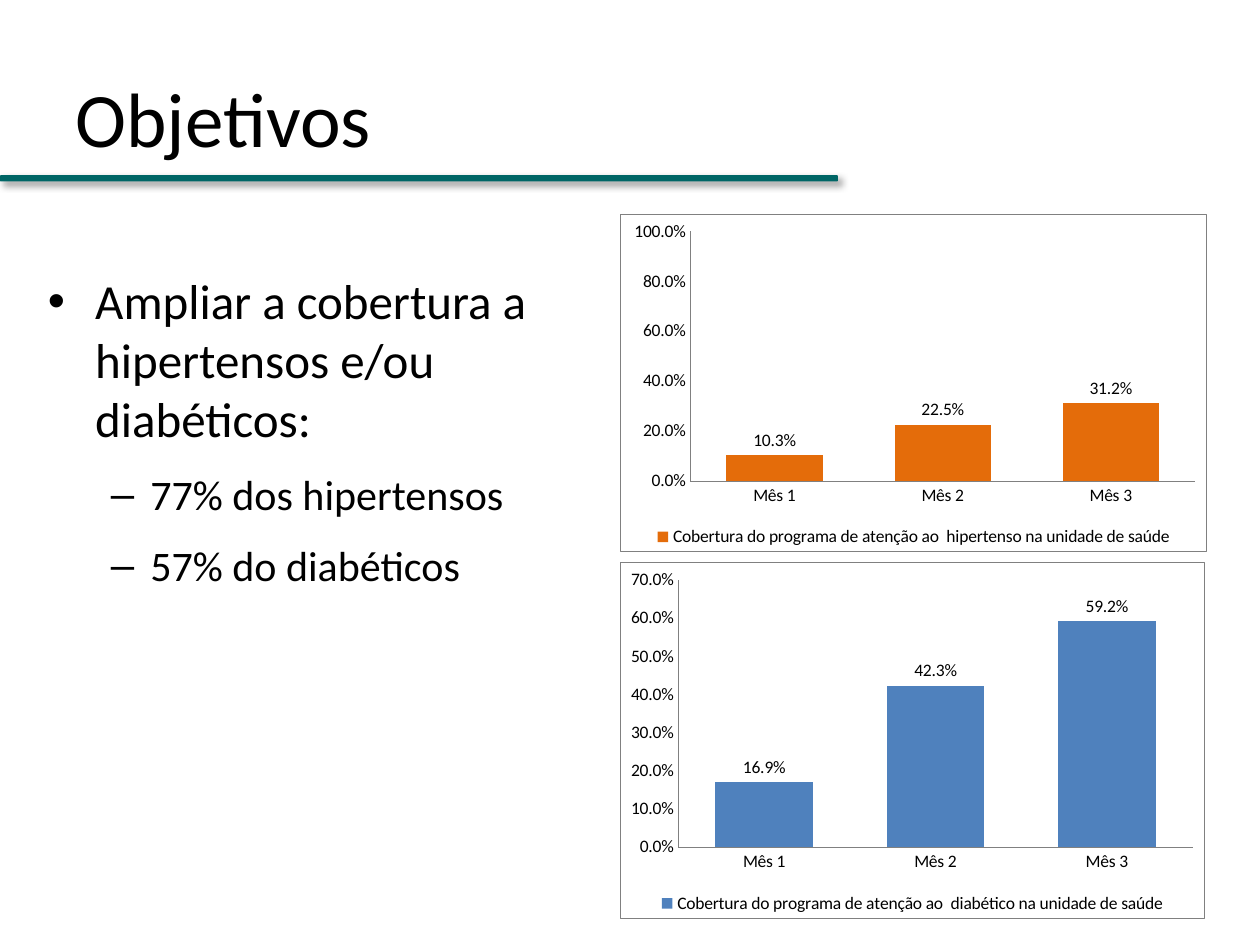
from dataclasses import dataclass

from lxml import etree
from pptx import Presentation
from pptx import util as u
from pptx.chart import data as chart_data
from pptx.dml.color import RGBColor
from pptx.enum import chart as ch, shapes, text
from pptx.oxml import parse_xml
from pptx.oxml.ns import nsdecls, qn


@dataclass
class Theme:
    font: str = "Calibri"
    ink: str = "000000"
    paper: str = "FFFFFF"
    rule: str = "006666"
    line: str = "808080"
    orange: str = "E46C0A"
    blue: str = "4F81BD"
    title_size: int = 44
    body_sizes: tuple = (28, 24)
    chart_size: int = 10
    hairline: float = 0.25


class SlideBuilder:
    def __init__(self, slide, theme):
        self.slide = slide
        self.theme = theme

    def style_font(self, font, size):
        font.name = self.theme.font
        font.size = u.Pt(size)
        font.color.rgb = RGBColor.from_string(self.theme.ink)

    def place(self, shape, box):
        shape.left, shape.top, shape.width, shape.height = map(u.Pt, box)

    def title(self, wording, box):
        shape = self.slide.shapes.title
        self.place(shape, box)
        frame = shape.text_frame
        frame.text = wording
        frame.vertical_anchor = text.MSO_ANCHOR.MIDDLE
        frame.paragraphs[0].alignment = text.PP_ALIGN.LEFT
        self.style_font(frame.paragraphs[0].font, self.theme.title_size)

    def bullets(self, items, box):
        shape = self.slide.placeholders[1]
        self.place(shape, box)
        frame = shape.text_frame
        frame.auto_size = text.MSO_AUTO_SIZE.NONE
        frame.text = "\n".join(wording for _, wording in items)
        indents = ((27, -27), (58.5, -22.5))
        for paragraph, (level, _) in zip(frame.paragraphs, items):
            paragraph.level = level
            paragraph.space_before = u.Pt(12)
            self.style_font(paragraph.font, self.theme.body_sizes[level])
            margin, hanging = indents[level]
            properties = paragraph._p.get_or_add_pPr()
            properties.set("marL", str(u.Pt(margin)))
            properties.set("indent", str(u.Pt(hanging)))

    def rule(self, box):
        shape = self.slide.shapes.add_shape(
            shapes.MSO_SHAPE.ROUNDED_RECTANGLE, *map(u.Pt, box))
        shape.fill.solid()
        shape.fill.fore_color.rgb = RGBColor.from_string(self.theme.rule)
        shape.line.fill.background()
        # Soft shadow to the lower right
        shape.shadow.inherit = False
        effects = shape._element.spPr.find(qn("a:effectLst"))
        effects.append(parse_xml(
            f'<a:outerShdw {nsdecls("a")} blurRad="{u.Pt(4)}" dist="{u.Pt(3)}" '
            'dir="2700000" algn="ctr" rotWithShape="0"><a:srgbClr val="000000">'
            '<a:alpha val="40000"/></a:srgbClr></a:outerShdw>'))

    def column_chart(self, box, plot, name, values, color, maximum=None, step=None):
        data = chart_data.CategoryChartData(number_format="0.0%")
        data.categories = ["Mês 1", "Mês 2", "Mês 3"]
        data.add_series(name, values)
        chart = self.slide.shapes.add_chart(
            ch.XL_CHART_TYPE.COLUMN_CLUSTERED, *map(u.Pt, box), data).chart
        self.style_font(chart.font, self.theme.chart_size)
        chart.has_title = False
        chart.has_legend = True
        chart.legend.position = ch.XL_LEGEND_POSITION.BOTTOM
        chart.legend.include_in_layout = False

        # Axes
        for axis in (chart.category_axis, chart.value_axis):
            axis.has_major_gridlines = False
            axis.major_tick_mark = axis.minor_tick_mark = ch.XL_TICK_MARK.NONE
            axis.format.line.color.rgb = RGBColor.from_string(self.theme.line)
            axis.format.line.width = u.Pt(self.theme.hairline)
            self.style_font(axis.tick_labels.font, self.theme.chart_size)
        axis = chart.value_axis
        axis.tick_labels.number_format = "0.0%"
        axis.tick_labels.number_format_is_linked = False
        if maximum is not None:
            axis.minimum_scale, axis.maximum_scale = 0, maximum
            axis.major_unit = step

        # Columns and labels
        columns = chart.plots[0]
        columns.gap_width = 75
        columns.vary_by_categories = False
        fill = columns.series[0].format.fill
        fill.solid()
        fill.fore_color.rgb = RGBColor.from_string(color)
        labels = columns.series[0].data_labels
        labels.show_value = True
        labels.number_format = "0.0%"
        labels.number_format_is_linked = False
        labels.position = ch.XL_LABEL_POSITION.OUTSIDE_END
        self.style_font(labels.font, self.theme.chart_size)
        self.chart_areas(chart, plot)

    def chart_areas(self, chart, plot):
        root = chart._chartSpace.find(qn("c:chart"))
        area = root.find(qn("c:plotArea"))
        for layout in area.findall(qn("c:layout")):
            area.remove(layout)
        layout = parse_xml(
            f'<c:layout {nsdecls("c")}><c:manualLayout><c:layoutTarget val="inner"/>'
            '<c:xMode val="edge"/><c:yMode val="edge"/></c:manualLayout></c:layout>')
        for key, value in zip("xywh", plot):
            etree.SubElement(layout[0], qn(f"c:{key}")).set("val", str(value))
        area.insert(0, layout)
        area.append(self.area_format("<a:ln><a:noFill/></a:ln>"))
        root.addnext(self.area_format(
            f'<a:ln w="{u.Pt(self.theme.hairline)}"><a:solidFill>'
            f'<a:srgbClr val="{self.theme.line}"/></a:solidFill></a:ln>'))

    def area_format(self, line):
        return parse_xml(
            f'<c:spPr {nsdecls("c", "a")}><a:solidFill>'
            f'<a:srgbClr val="{self.theme.paper}"/></a:solidFill>{line}</c:spPr>')


def main():
    presentation = Presentation()
    presentation.slide_width, presentation.slide_height = u.Pt(720), u.Pt(540)
    slide = presentation.slides.add_slide(presentation.slide_layouts[1])
    theme = Theme()
    builder = SlideBuilder(slide, theme)

    # Heading and goals
    builder.title("Objetivos", (36, 21.6, 648, 90))
    builder.bullets([
        (0, "Ampliar a cobertura a hipertensos e/ou diabéticos:"),
        (1, "77% dos hipertensos"),
        (1, "57% do diabéticos"),
    ], (20.2, 151.2, 312.5, 356.4))
    builder.rule((0, 100.1, 478.8, 3.6))

    # Coverage by month
    series_name = "Cobertura do programa de atenção ao  {} na unidade de saúde"
    builder.column_chart(
        (354.2, 122.4, 335.5, 193), (0.12, 0.05, 0.86, 0.74),
        series_name.format("hipertenso"), (0.103, 0.225, 0.312),
        theme.orange, maximum=1, step=0.2)
    builder.column_chart(
        (354.2, 321.1, 334.1, 203.8), (0.1, 0.05, 0.88, 0.75),
        series_name.format("diabético"), (0.169, 0.423, 0.592), theme.blue)

    presentation.save("out.pptx")


if __name__ == "__main__":
    main()
